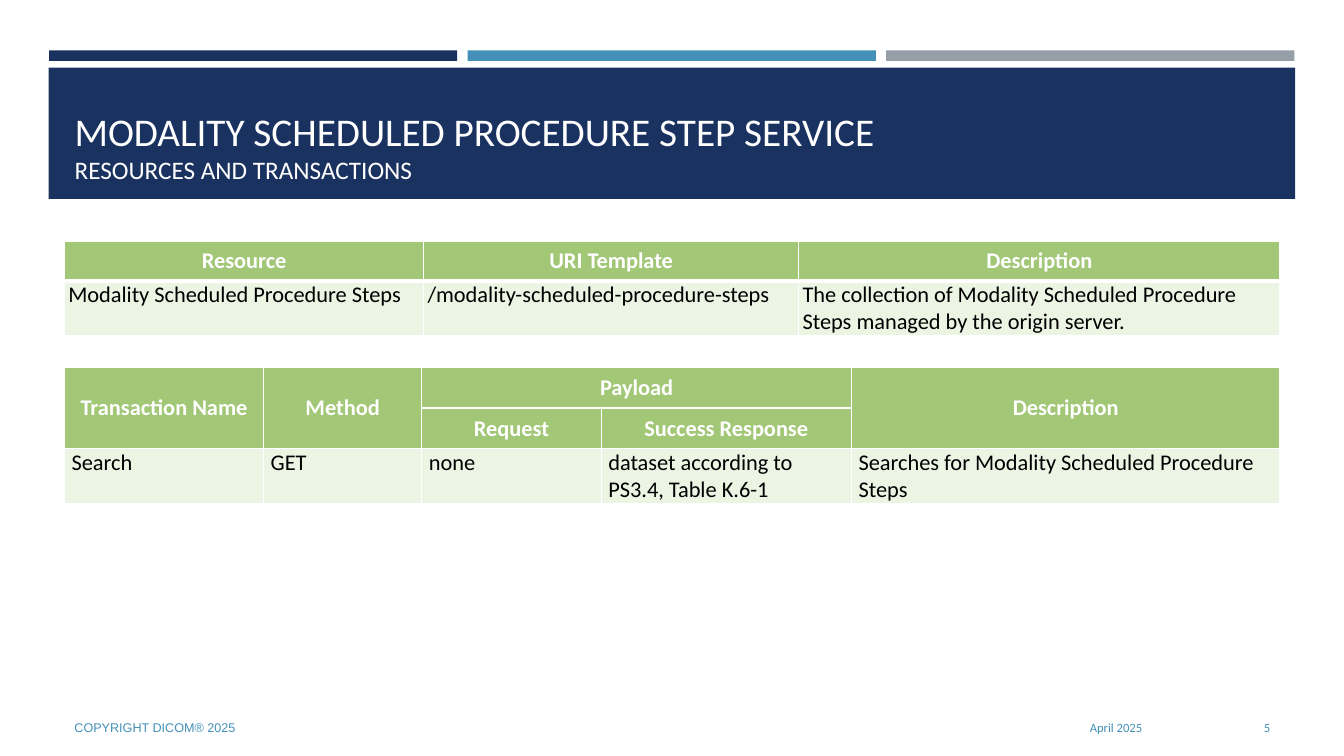
"""Build the Modality Scheduled Procedure Step Service slide."""
from lxml.etree import SubElement
from pptx import Presentation
from pptx.dml.color import RGBColor
from pptx.enum.shapes import MSO_SHAPE
from pptx.enum.text import MSO_ANCHOR, MSO_AUTO_SIZE, PP_ALIGN
from pptx.oxml.ns import qn
from pptx.util import Pt

COLORS = {"navy": "1A3260", "blue": "4590B8", "gray": "969FA7", "white": "FFFFFF",
          "black": "000000", "green": "A2C777", "pale": "ECF4E4"}
LEFT, WIDTH = 46.08, 868.3

TITLE_LINES = [("MODALITY SCHEDULED PROCEDURE STEP SERVICE", 28),
               ("RESOURCES AND TRANSACTIONS", 18)]
BARS = ["navy", "blue", "gray"]
FOOTERS = [
    ("April 2025", 599, 224, "Calibri", PP_ALIGN.RIGHT),
    ("COPYRIGHT DICOM® 2025", LEFT, 544.3, "Arial", PP_ALIGN.LEFT),
    ("5", 831.6, 82.8, "Calibri", PP_ALIGN.RIGHT),
]
TABLES = [
    {"top": 172.1, "columns": [256.6, 267.9, 343.8], "heights": [28.5, 39.5],
     "inset": 2.7, "header_rows": 1, "header_line": 3, "merges": [],
     "rows": [
         ["Resource", "URI Template", "Description"],
         ["Modality Scheduled Procedure Steps", "/modality-scheduled-procedure-steps",
          "The collection of Modality Scheduled Procedure Steps managed by the origin server."],
     ]},
    {"top": 262.4, "columns": [142.2, 113, 128.2, 178.8, 306.1],
     "heights": [29.1, 29.1, 39.3], "inset": 5.1, "header_rows": 2, "header_line": 1,
     "merges": [(0, 0, 1, 0), (0, 1, 1, 1), (0, 2, 0, 3), (0, 4, 1, 4)],
     "rows": [
         ["Transaction Name", "Method", "Payload", "", "Description"],
         ["", "", "Request", "Success Response", ""],
         ["Search", "GET", "none", "dataset according to PS3.4, Table K.6-1",
          "Searches for Modality Scheduled Procedure Steps"],
     ]},
]


def color(name):
    return RGBColor.from_string(COLORS[name])


def apply(target, values):
    for name, value in values.items():
        setattr(target, name, value)


def format_font(font, size, color_name, family="Calibri", bold=False):
    apply(font, {"size": Pt(size), "name": family, "bold": bold})
    font.color.rgb = color(color_name)


def add_band(slide, left, top, width, height, fill):
    shape = slide.shapes.add_shape(
        MSO_SHAPE.RECTANGLE, Pt(left), Pt(top), Pt(width), Pt(height))
    shape.shadow.inherit = False
    shape.fill.solid()
    shape.fill.fore_color.rgb = color(fill)
    shape.line.fill.background()


def add_title(slide):
    title = slide.shapes.title
    apply(title, {"left": Pt(LEFT), "top": Pt(55.4), "width": Pt(WIDTH), "height": Pt(80)})
    title.element.getparent().append(title.element)
    frame = title.text_frame
    apply(frame, {"word_wrap": True, "auto_size": MSO_AUTO_SIZE.NONE,
                  "vertical_anchor": MSO_ANCHOR.BOTTOM})
    paragraph = frame.paragraphs[0]
    paragraph.alignment = PP_ALIGN.LEFT
    for index, (text, size) in enumerate(TITLE_LINES):
        if index:
            paragraph.add_line_break()
        run = paragraph.add_run()
        run.text = text
        format_font(run.font, size, "white")


def add_footer(slide, text, left, width, family, alignment):
    frame = slide.shapes.add_textbox(Pt(left), Pt(505.4), Pt(width), Pt(28.8)).text_frame
    apply(frame, {"word_wrap": True, "vertical_anchor": MSO_ANCHOR.MIDDLE})
    paragraph = frame.paragraphs[0]
    apply(paragraph, {"text": text, "alignment": alignment})
    format_font(paragraph.font, 9, "blue", family)


def set_borders(cell, bottom_width):
    properties = cell._tc.get_or_add_tcPr()
    for side, width in (("L", 1), ("R", 1), ("T", 1), ("B", bottom_width)):
        line = SubElement(properties, qn(f"a:ln{side}"), w=str(Pt(width)))
        fill = SubElement(line, qn("a:solidFill"))
        SubElement(fill, qn("a:srgbClr"), val=COLORS["white"])


def format_cell(cell, text, header, inset, bottom_width):
    set_borders(cell, bottom_width)
    cell.fill.solid()
    cell.fill.fore_color.rgb = color("green" if header else "pale")
    apply(cell, {"margin_left": Pt(inset), "margin_right": Pt(inset),
                 "margin_top": 0, "margin_bottom": 0,
                 "vertical_anchor": MSO_ANCHOR.MIDDLE if header else MSO_ANCHOR.TOP})
    paragraph = cell.text_frame.paragraphs[0]
    apply(paragraph, {"text": text, "alignment": PP_ALIGN.CENTER if header else PP_ALIGN.LEFT})
    format_font(paragraph.font, 16, "white" if header else "black", bold=header)


def add_grid(slide, content):
    rows, columns, heights = content["rows"], content["columns"], content["heights"]
    table = slide.shapes.add_table(
        len(rows), len(columns), Pt(LEFT), Pt(content["top"]),
        Pt(sum(columns)), Pt(sum(heights))).table
    for column, width in zip(table.columns, columns):
        column.width = Pt(width)
    for row_index, (row, texts) in enumerate(zip(table.rows, rows)):
        row.height = Pt(heights[row_index])
        header = row_index < content["header_rows"]
        bottom_width = content["header_line"] if header else 1
        for cell, text in zip(row.cells, texts):
            format_cell(cell, text, header, content["inset"], bottom_width)
    for top, left, bottom, right in content["merges"]:
        table.cell(top, left).merge(table.cell(bottom, right))


def main():
    presentation = Presentation()
    apply(presentation, {"slide_width": Pt(960), "slide_height": Pt(540)})
    slide = presentation.slides.add_slide(presentation.slide_layouts[5])
    for index, fill in enumerate(BARS):
        add_band(slide, 35 + index * 299, 36, 291.6, 7.5, fill)
    add_band(slide, 34.8, 48.4, 890.3, 93.7, "navy")
    add_title(slide)
    for footer in FOOTERS:
        add_footer(slide, *footer)
    for content in TABLES:
        add_grid(slide, content)
    presentation.save("out.pptx")


if __name__ == "__main__":
    main()
